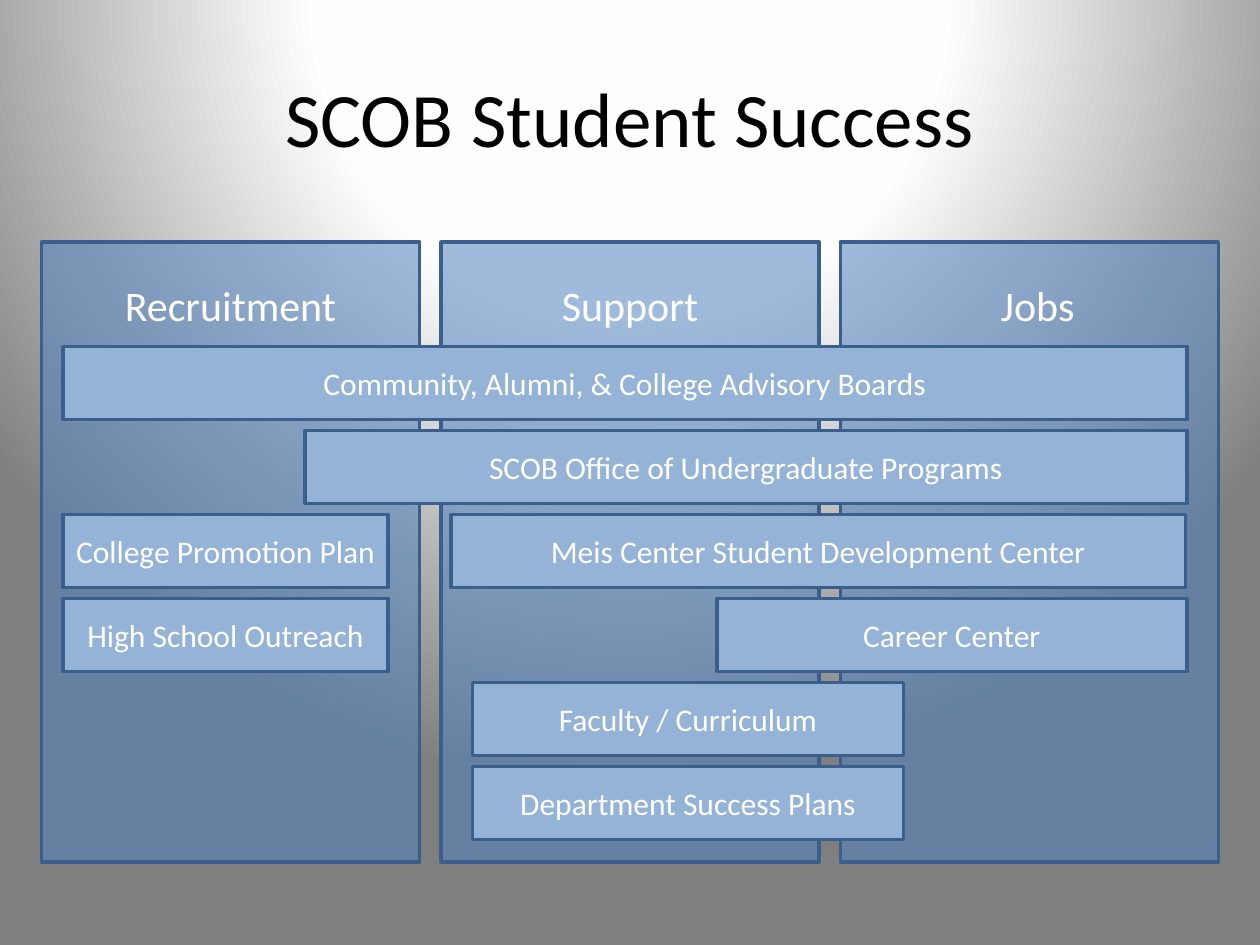
from lxml import etree
from pptx import Presentation
from pptx.dml.color import RGBColor
from pptx.enum import shapes, text
from pptx.oxml import ns
from pptx.util import Inches, Pt

WHITE = RGBColor(0xFF, 0xFF, 0xFF)
BLACK = RGBColor(0x00, 0x00, 0x00)
COLUMN_BLUE = RGBColor(0x4F, 0x81, 0xBD)
BAR_BLUE = RGBColor(0x95, 0xB3, 0xD7)
OUTLINE_BLUE = RGBColor(0x3A, 0x5F, 0x8C)
GLOW_STOPS = [(0, WHITE), (40, RGBColor(0xFE, 0xFE, 0xFE)),
              (100, RGBColor(0x7F, 0x7F, 0x7F))]
GLOW_CENTER = {"l": 50, "t": -80, "r": 50, "b": 180}

# Column heading, left and width of its label
COLUMNS = [("Recruitment", 0.85, 1.96), ("Support", 4.31, 1.38), ("Jobs", 7.81, 0.85)]
# Row, left, width and wording of each program bar
BARS = [
    (0, 0.5, 8.92, "Community, Alumni, & College Advisory Boards"),
    (1, 2.42, 7, "SCOB Office of Undergraduate Programs"),
    (2, 0.5, 2.58, "College Promotion Plan"),
    (2, 3.58, 5.83, "Meis Center Student Development Center"),
    (3, 0.5, 2.58, "High School Outreach"),
    (3, 5.69, 3.73, "Career Center"),
    (4, 3.75, 3.42, "Faculty / Curriculum"),
    (5, 3.75, 3.42, "Department Success Plans"),
]


def write(shape, wording, size, color=WHITE, wrap=True, anchor=text.MSO_ANCHOR.MIDDLE):
    frame = shape.text_frame
    frame.text = wording
    for name, value in {"word_wrap": wrap, "vertical_anchor": anchor}.items():
        setattr(frame, name, value)
    paragraph = frame.paragraphs[0]
    paragraph.alignment = text.PP_ALIGN.CENTER
    for name, value in {"name": "Calibri", "size": Pt(size)}.items():
        setattr(paragraph.font, name, value)
    paragraph.font.color.rgb = color


def add_box(slide, left, top, width, height, color):
    shape = slide.shapes.add_shape(
        shapes.MSO_SHAPE.RECTANGLE,
        Inches(left), Inches(top), Inches(width), Inches(height))
    shape.shadow.inherit = False
    shape.fill.solid()
    shape.fill.fore_color.rgb = color
    shape.line.color.rgb = OUTLINE_BLUE
    shape.line.width = Pt(2)
    return shape


def set_background(slide):
    slide.background.fill.gradient()
    gradient = slide.element.find(".//" + ns.qn("a:gradFill"))
    for child in list(gradient):
        gradient.remove(child)
    stops = etree.SubElement(gradient, ns.qn("a:gsLst"))
    for position, color in GLOW_STOPS:
        stop = etree.SubElement(stops, ns.qn("a:gs"), pos=str(position * 1000))
        etree.SubElement(stop, ns.qn("a:srgbClr"), val=str(color))
    circle = etree.SubElement(gradient, ns.qn("a:path"), {"path": "circle"})
    etree.SubElement(circle, ns.qn("a:fillToRect"),
                     {side: str(percent * 1000) for side, percent in GLOW_CENTER.items()})


def place_title(slide, left, top, width, height):
    title = slide.shapes.title
    box = {"left": left, "top": top, "width": width, "height": height}
    for name, value in box.items():
        setattr(title, name, Inches(value))
    write(title, "SCOB Student Success", 44, BLACK)


def add_columns(slide, left, top, width, height, gap):
    # Translucent panels, the rightmost at the back
    for index in reversed(range(len(COLUMNS))):
        panel = add_box(slide, left + index * (width + gap), top, width, height, COLUMN_BLUE)
        color = panel.fill._xPr.find(".//" + ns.qn("a:srgbClr"))
        etree.SubElement(color, ns.qn("a:alpha"), val="54000")
    # Headings
    for heading, label_left, label_width in COLUMNS:
        label = slide.shapes.add_textbox(
            Inches(label_left), Inches(top + 0.25), Inches(label_width), Inches(0.5))
        write(label, heading, 24, wrap=False, anchor=text.MSO_ANCHOR.TOP)


def add_bars(slide, top, height, pitch):
    for row, left, width, wording in BARS:
        bar = add_box(slide, left, top + row * pitch, width, height, BAR_BLUE)
        write(bar, wording, 18)


def main():
    presentation = Presentation()
    presentation.slide_width = Inches(10)
    presentation.slide_height = Inches(7.5)
    slide = presentation.slides.add_slide(presentation.slide_layouts[5])
    set_background(slide)
    place_title(slide, 0.5, 0.3, 9, 1.25)
    add_columns(slide, left=0.33, top=1.92, width=3, height=4.92, gap=0.17)
    add_bars(slide, top=2.75, height=0.58, pitch=2 / 3)
    presentation.save("out.pptx")


if __name__ == "__main__":
    main()
